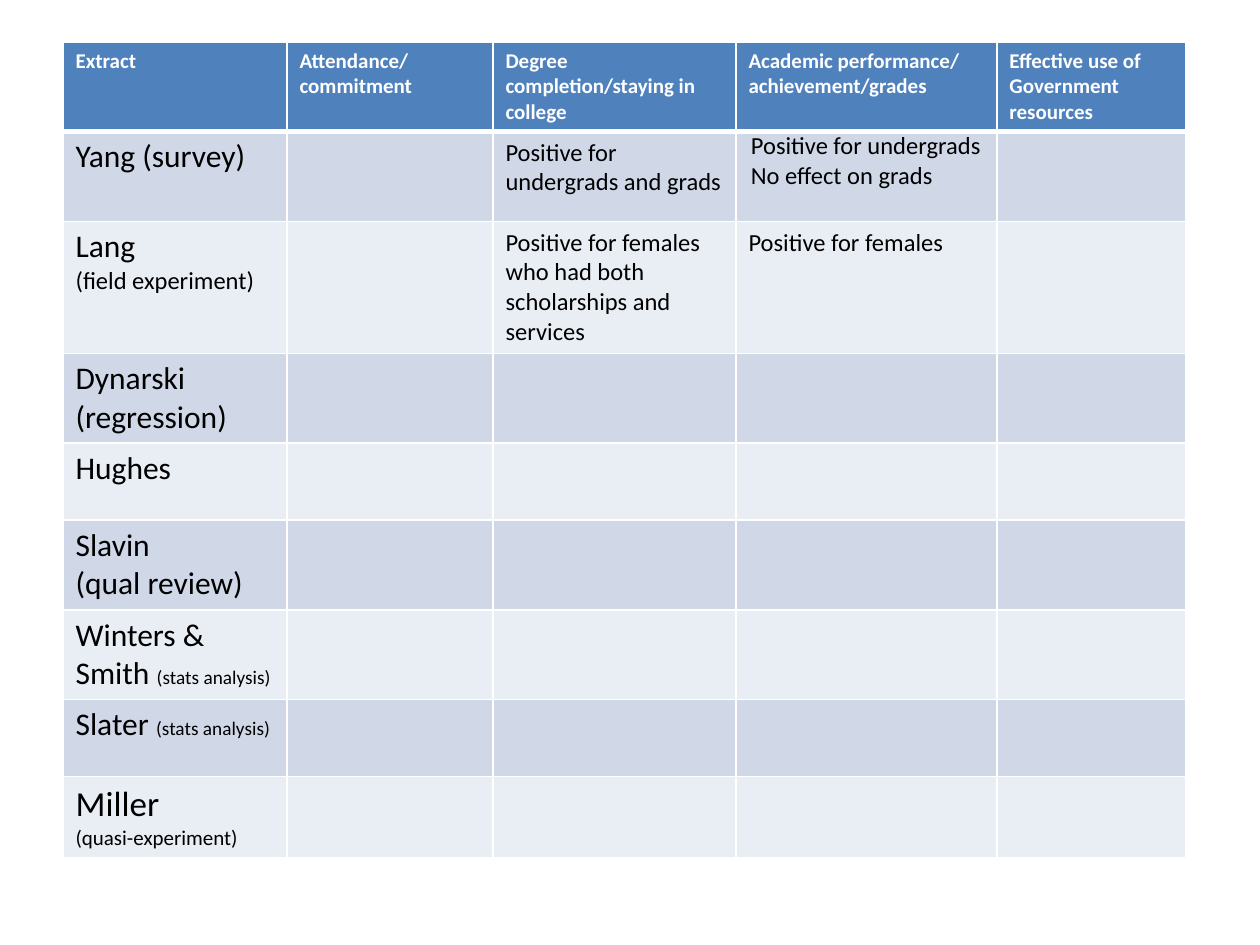
"""Build a slide with a table of study extracts against student outcomes."""
from lxml.etree import SubElement
from pptx import Presentation
from pptx.dml.color import RGBColor
from pptx.oxml.ns import qn
from pptx.util import Emu, Pt

PX = 914400 / 126
THEME = {
    "font": "Calibri", "head": "4F81BD", "bands": ("D0D8E8", "E9EDF4"),
    "light": "FFFFFF", "dark": "000000",
    "big": 20, "name": 18, "body": 14, "small": 12, "note": 11,
    "line": 1, "head_line": 3,
}


def px(n):
    return Emu(round(n * PX))


def add_border(cell, side, width):
    ln = SubElement(cell._tc.get_or_add_tcPr(), qn(f"a:{side}"), w=str(Pt(width)))
    fill = SubElement(ln, qn("a:solidFill"))
    SubElement(fill, qn("a:srgbClr"), val=THEME["light"])


COLS = [224, 206, 243, 261, 189]
ROWS = [89, 90, 132, 89, 77, 90, 89, 77, 81]
HEADS = ["Extract", "Attendance/\ncommitment", "Degree completion/staying in college",
         "Academic performance/\nachievement/grades",
         "Effective use of Government resources"]
EXTRACTS = [
    [[("Yang (survey)", "name")]],
    [[("Lang", "name")], [("(field experiment)", "body")]],
    [[("Dynarski", "name")], [("(regression)", "name")]],
    [[("Hughes", "name")]],
    [[("Slavin", "name")], [("(qual review)", "name")]],
    [[("Winters & Smith ", "name"), ("(stats analysis)", "note")]],
    [[("Slater ", "name"), ("(stats analysis)", "note")]],
    [[("Miller", "big")], [("(quasi-experiment)", "small")]],
]
FINDINGS = {
    (1, 2): "Positive for undergrads and grads",
    (1, 3): "Positive for undergrads\nNo effect on grads",
    (2, 2): "Positive for females who had both scholarships and services",
    (2, 3): "Positive for females",
}

cells = {(0, c): [[(line, "small")] for line in head.split("\n")]
         for c, head in enumerate(HEADS)}
cells.update({(r, 0): paras for r, paras in enumerate(EXTRACTS, 1)})
cells.update({key: [[(line, "body")] for line in text.split("\n")]
              for key, text in FINDINGS.items()})

prs = Presentation()
prs.slide_width, prs.slide_height = px(1260), px(945)
s = prs.slides.add_slide(prs.slide_layouts[6])
tbl = s.shapes.add_table(len(ROWS), len(COLS), px(63), px(42),
                         px(sum(COLS)), px(sum(ROWS))).table
for col, width in zip(tbl.columns, COLS):
    col.width = px(width)
for row, height in zip(tbl.rows, ROWS):
    row.height = px(height)

for i in range(len(ROWS)):
    for j in range(len(COLS)):
        cell = tbl.cell(i, j)
        top = THEME["head_line" if i == 1 else "line"]
        bottom = THEME["head_line" if i == 0 else "line"]
        for side, width in {"lnL": THEME["line"], "lnR": THEME["line"],
                            "lnT": top, "lnB": bottom}.items():
            add_border(cell, side, width)
        cell.fill.solid()
        color = THEME["bands"][(i - 1) % 2] if i else THEME["head"]
        cell.fill.fore_color.rgb = RGBColor.from_string(color)
        tf = cell.text_frame
        for k, runs in enumerate(cells.get((i, j), [])):
            p = tf.add_paragraph() if k else tf.paragraphs[0]
            for text, size in runs:
                r = p.add_run()
                r.text = text
                fmt = {"name": THEME["font"], "size": Pt(THEME[size]), "bold": i == 0}
                for name, value in fmt.items():
                    setattr(r.font, name, value)
                ink = THEME["dark" if i else "light"]
                r.font.color.rgb = RGBColor.from_string(ink)

margins = {"margin_left": px(15), "margin_right": px(15),
           "margin_top": 0, "margin_bottom": 0}
for name, value in margins.items():
    setattr(tbl.cell(1, 3), name, value)

prs.save("out.pptx")
